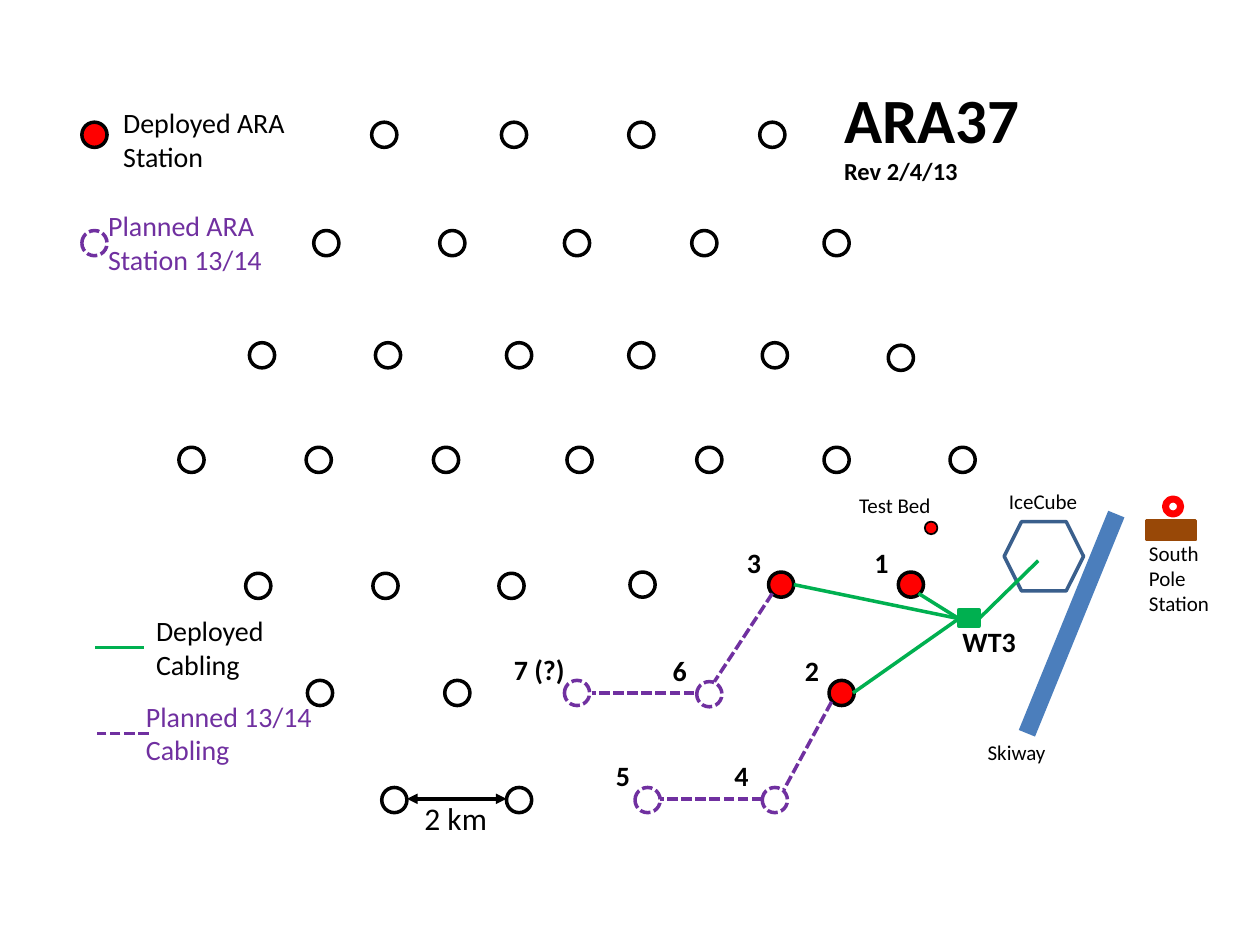
from pptx import Presentation
from pptx.dml.color import RGBColor
from pptx.enum.dml import MSO_LINE
from pptx.enum.shapes import MSO_CONNECTOR, MSO_SHAPE
from pptx.enum.text import MSO_AUTO_SIZE
from pptx.oxml.ns import qn
from pptx.util import Inches, Pt
from lxml import etree

ELLIPSE = MSO_SHAPE.OVAL
RECTANGLE = MSO_SHAPE.RECTANGLE
HEXAGON = MSO_SHAPE.HEXAGON
STRAIGHT = MSO_CONNECTOR.STRAIGHT
DASH = MSO_LINE.SQUARE_DOT
GROW = MSO_AUTO_SIZE.SHAPE_TO_FIT_TEXT

SLIDE_WIDTH = Inches(10)
SLIDE_HEIGHT = Inches(7.5)
COLUMNS = 100
ROWS = 75
FONT = "Calibri"
STATION_SIZE = 2

COLORS = {
    "black": "000000",
    "red": "FF0000",
    "green": "00B050",
    "purple": "7030A0",
    "blue": "4B7EBC",
    "navy": "3A5F8C",
    "brown": "984807",
}

STATION_STYLES = {
    "proposed": {"line": "black"},
    "deployed": {"line": "black", "fill": "red"},
    "planned": {"line": "purple", "dashed": True},
}

STATION_ROWS = {
    "proposed": [
        (9.7, [29.5, 39.8, 49.9, 60.3]),
        (18.3, [24.9, 34.9, 44.8, 54.9, 65.4]),
        (27.2, [19.8, 29.8, 40.2, 49.9, 60.5]),
        (27.4, [70.5]),
        (35.5, [14.2, 24.3, 34.4, 45, 55.3, 65.4, 75.4]),
        (45.5, [19.5, 29.6, 39.6]),
        (45.4, [50]),
        (54, [24.4, 35.3]),
        (62.5, [30.3, 40.2]),
    ],
    "deployed": [(9.7, [6.5]), (45.4, [61, 71.3]), (54, [65.8])],
    "planned": [(18.3, [6.5]), (54, [44.8]), (54.1, [55.3]), (62.5, [50.4, 60.5])],
}

LANDMARKS = [
    (HEXAGON, (79.7, 41.4, 6.3, 5.5), "navy", None, 2),
    (ELLIPSE, (73.4, 41.4, 1, 1), "black", "red", 1),
    (RECTANGLE, (76.1, 48.4, 1.6, 1.3), "green", "green", 2),
    (RECTANGLE, (91, 41.3, 3.9, 1.5), "brown", "brown", 2),
    (ELLIPSE, (92.5, 39.6, 1.2, 1.2), "red", None, 4),
]

JUNCTION = (76.1, 49.1)
DEPLOYED_CABLES = [
    ((82.4, 44.5), (77.7, 49.1)),
    (JUNCTION, (72.9, 47.1)),
    (JUNCTION, (63, 46.4)),
    (JUNCTION, (67.7, 55)),
    ((11.4, 51.4), (7.5, 51.4)),
]
PLANNED_CABLES = [
    ((66, 55.7), (62.2, 62.7)),
    ((60.5, 63.4), (52.4, 63.4)),
    ((61.3, 47.1), (56.7, 54.1)),
    ((55.1, 55), (47, 55)),
    ((11.8, 58.2), (7.7, 58.2)),
]

STATION_NUMBERS = [
    ("1", 68.4, 42.8),
    ("2", 62.9, 51.4),
    ("3", 58.3, 42.8),
    ("4", 57.3, 59.7),
    ("5", 47.9, 59.7),
    ("6", 52.4, 51.4),
]

LABELS = [
    ("IceCube", (79.1, 38.3, 8.7, 3), 12, "black", False),
    ("Test Bed", (67.2, 38.6, 9.5, 3), 12, "black", False),
    ("Skiway", (77.4, 58.2, 8.7, 3), 12, "black", False),
    ("South Pole Station", (90.2, 42.4, 7.1, 7.1), 12, "black", False),
    ("2 km", (32.7, 62.9, 7.9, 4), 18, "black", False),
    ("Deployed ARA Station", (8.8, 7.9, 15.7, 6.4), 16, "black", False),
    ("Planned ARA Station 13/14", (7.6, 16.1, 15.9, 6.4), 16, "purple", False),
    ("Deployed Cabling", (11.4, 48.2, 12.7, 6.4), 16, "black", False),
    ("Planned 13/14 Cabling", (10.6, 55, 18.9, 6.4), 16, "purple", False),
    ("7 (?)", (39.8, 51.3, 6.2, 3.7), 16, "black", True),
    ("WT3", (75.4, 49.1, 7.5, 3.7), 16, "black", True),
]


def column(count):
    return round(SLIDE_WIDTH * count / COLUMNS)


def row(count):
    return round(SLIDE_HEIGHT * count / ROWS)


def grid_box(box):
    left, top, width, height = box
    return column(left), row(top), column(width), row(height)


def color(name):
    return RGBColor.from_string(COLORS[name])


def style_line(line, color_name, weight, dashed=False):
    line.color.rgb = color(color_name)
    line.width = Pt(weight)
    if dashed:
        line.dash_style = DASH


def add_marker(slide, kind, box, line, fill=None, weight=2, dashed=False):
    shape = slide.shapes.add_shape(kind, *grid_box(box))
    shape.shadow.inherit = False
    if fill:
        shape.fill.solid()
        shape.fill.fore_color.rgb = color(fill)
    else:
        shape.fill.background()
    style_line(shape.line, line, weight, dashed)


def add_line(slide, start, end, color_name, weight=2, dashed=False, arrows=False):
    connector = slide.shapes.add_connector(
        STRAIGHT, column(start[0]), row(start[1]), column(end[0]), row(end[1])
    )
    style_line(connector.line, color_name, weight, dashed)
    properties = connector._element.spPr
    if arrows:
        outline = properties.find(qn("a:ln"))
        for end_name in ("a:headEnd", "a:tailEnd"):
            etree.SubElement(outline, qn(end_name)).set("type", "triangle")
    etree.SubElement(properties, qn("a:effectLst"))


def add_text(slide, lines, box, color_name="black", bold=False):
    text_frame = slide.shapes.add_textbox(*grid_box(box)).text_frame
    text_frame.word_wrap = True
    text_frame.auto_size = GROW
    text_frame.text = "\n".join(text for text, size in lines)
    for paragraph, (text, size) in zip(text_frame.paragraphs, lines):
        font = paragraph.runs[0].font
        font.name = FONT
        font.size = Pt(size)
        font.bold = bold
        font.color.rgb = color(color_name)


def add_stations(slide):
    for status, station_rows in STATION_ROWS.items():
        for top, lefts in station_rows:
            for left in lefts:
                box = (left, top, STATION_SIZE, STATION_SIZE)
                add_marker(slide, ELLIPSE, box, **STATION_STYLES[status])


def add_cables(slide):
    for start, end in DEPLOYED_CABLES:
        add_line(slide, start, end, "green")
    for start, end in PLANNED_CABLES:
        add_line(slide, start, end, "purple", dashed=True)


def add_labels(slide):
    add_text(slide, [("ARA37", 36), ("Rev 2/4/13", 14)], (66, 5.9, 17.9, 9.4), bold=True)
    for text, box, size, color_name, bold in LABELS:
        add_text(slide, [(text, size)], box, color_name, bold)
    for number, left, top in STATION_NUMBERS:
        add_text(slide, [(number, 16)], (left, top, 3.9, 3.7), bold=True)


def main():
    presentation = Presentation()
    presentation.slide_width = SLIDE_WIDTH
    presentation.slide_height = SLIDE_HEIGHT
    slide = presentation.slides.add_slide(presentation.slide_layouts[6])
    add_stations(slide)
    add_line(slide, (88.6, 40.8), (81.5, 58.2), "blue", weight=10)
    for landmark in LANDMARKS:
        add_marker(slide, *landmark)
    add_line(slide, (32.3, 63.4), (40.2, 63.4), "black", arrows=True)
    add_cables(slide)
    add_labels(slide)
    presentation.save("out.pptx")


if __name__ == "__main__":
    main()
